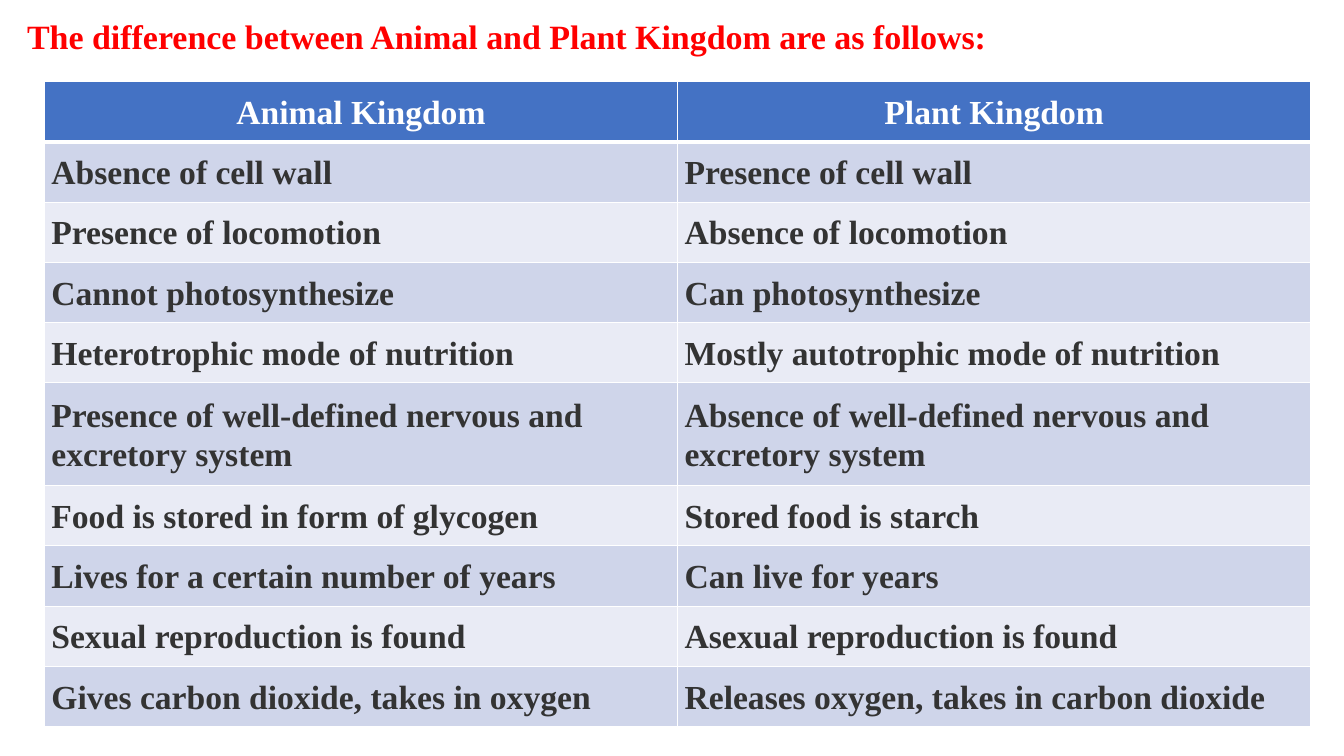
from lxml.etree import SubElement
from pptx import Presentation
from pptx.dml.color import RGBColor
from pptx.enum.text import MSO_ANCHOR, PP_ALIGN
from pptx.oxml.ns import qn
from pptx.util import Inches, Pt

RED = RGBColor(0xFF, 0x00, 0x00)
WHITE = RGBColor(0xFF, 0xFF, 0xFF)
DARK = RGBColor(0x33, 0x33, 0x33)
HEADER_BLUE = RGBColor(0x44, 0x72, 0xC4)
BANDS = (RGBColor(0xE9, 0xEB, 0xF5), RGBColor(0xCF, 0xD5, 0xEA))
FONT = "Times New Roman"

TITLE = "The difference between Animal and Plant Kingdom are as follows:"
ROWS = [
    ("Animal Kingdom", "Plant Kingdom"),
    ("Absence of cell wall", "Presence of cell wall"),
    ("Presence of locomotion", "Absence of locomotion"),
    ("Cannot photosynthesize", "Can photosynthesize"),
    ("Heterotrophic mode of nutrition", "Mostly autotrophic mode of nutrition"),
    ("Presence of well-defined nervous and excretory system",
     "Absence of well-defined nervous and excretory system"),
    ("Food is stored in form of glycogen", "Stored food is starch"),
    ("Lives for a certain number of years", "Can live for years"),
    ("Sexual reproduction is found", "Asexual reproduction is found"),
    ("Gives carbon dioxide, takes in oxygen",
     "Releases oxygen, takes in carbon dioxide"),
]
TWO_LINE_ROW = 5
TWO_LINE_HEIGHT = 1.02


def style_paragraph(p, size, color, spacing):
    p.font.name = FONT
    p.font.size = Pt(size)
    p.font.bold = True
    p.font.color.rgb = color
    p.line_spacing = spacing


def set_borders(cell, top, bottom):
    """Give a cell white borders; top and bottom are widths in points."""
    tc_pr = cell._tc.get_or_add_tcPr()
    for side, width in (("L", 1), ("R", 1), ("T", top), ("B", bottom)):
        ln = SubElement(tc_pr, qn(f"a:ln{side}"), w=str(Pt(width)))
        fill = SubElement(ln, qn("a:solidFill"))
        SubElement(fill, qn("a:srgbClr"), val=str(WHITE))


def add_title(slide, left, top, width, height):
    tf = slide.shapes.add_textbox(
        Inches(left), Inches(top), Inches(width), Inches(height)).text_frame
    tf.word_wrap = True
    tf.vertical_anchor = MSO_ANCHOR.MIDDLE
    p = tf.paragraphs[0]
    p.text = TITLE
    style_paragraph(p, 24.3, RED, 0.9)


def fill_cell(cell, text, row):
    header = row == 0
    set_borders(cell, 3 if row == 1 else 1, 3 if header else 1)
    cell.fill.solid()
    cell.fill.fore_color.rgb = HEADER_BLUE if header else BANDS[row % 2]
    cell.vertical_anchor = MSO_ANCHOR.MIDDLE
    cell.margin_left = cell.margin_right = Inches(0.07)
    cell.margin_top = cell.margin_bottom = 0
    p = cell.text_frame.paragraphs[0]
    p.text = text
    p.alignment = PP_ALIGN.CENTER if header else PP_ALIGN.LEFT
    p.space_after = Pt(8)
    style_paragraph(p, 24, WHITE if header else DARK, 1.07)


def add_comparison(slide, left, top, width, height):
    table = slide.shapes.add_table(
        len(ROWS), 2, Inches(left), Inches(top),
        Inches(width), Inches(height)).table
    row_height = (height - TWO_LINE_HEIGHT) / (len(ROWS) - 1)
    for i, texts in enumerate(ROWS):
        table.rows[i].height = Inches(
            TWO_LINE_HEIGHT if i == TWO_LINE_ROW else row_height)
        for j, text in enumerate(texts):
            fill_cell(table.cell(i, j), text, i)


def main():
    prs = Presentation()
    prs.slide_width, prs.slide_height = Inches(13.33), Inches(7.5)
    s = prs.slides.add_slide(prs.slide_layouts[6])
    add_title(s, 0.17, 0.16, 11.39, 0.44)
    add_comparison(s, 0.44, 0.81, 12.56, 6.4)
    prs.save("out.pptx")


if __name__ == "__main__":
    main()
